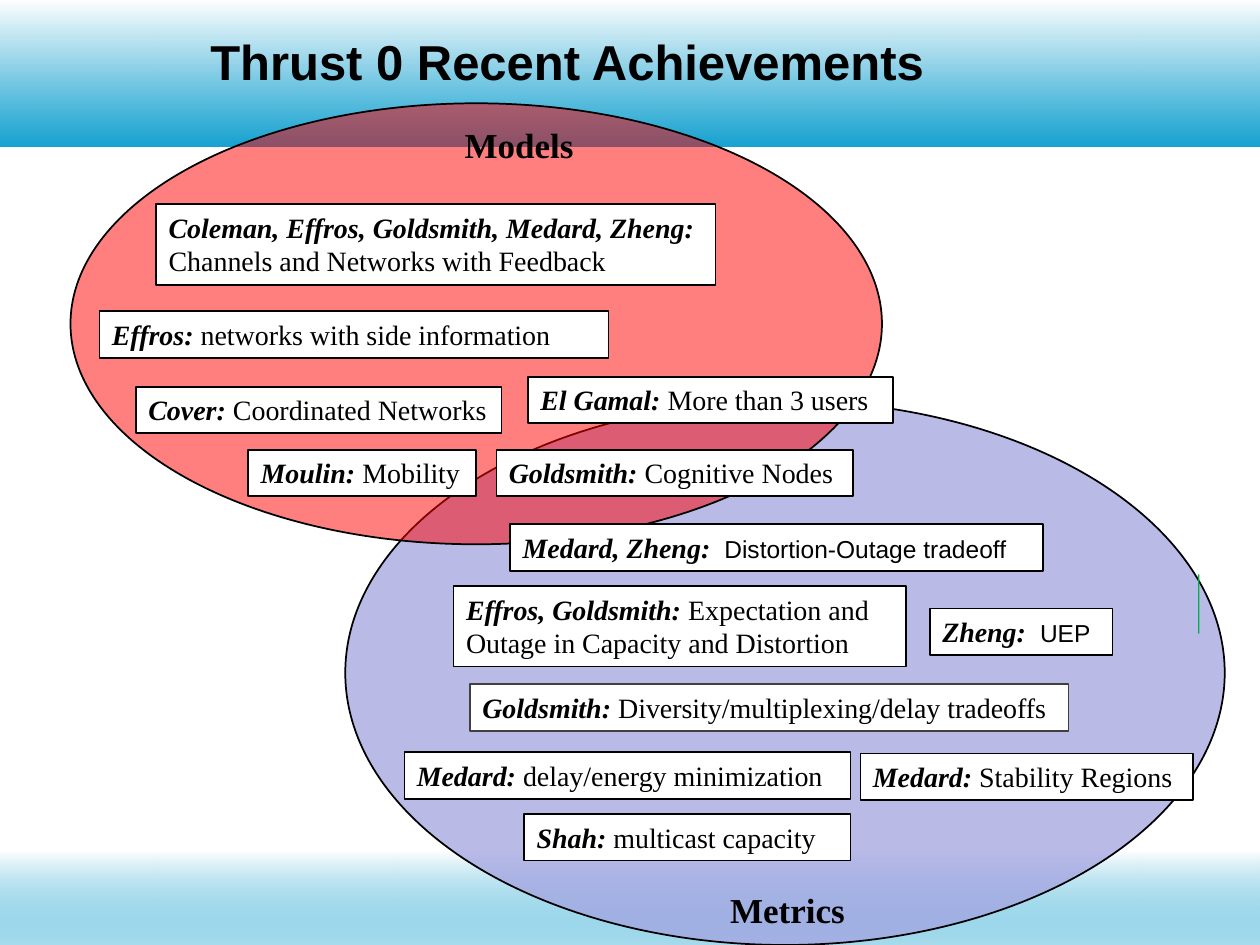
from dataclasses import dataclass

from lxml import etree
from pptx import Presentation
from pptx.dml.color import RGBColor
from pptx.enum.shapes import MSO_SHAPE
from pptx.enum.text import MSO_ANCHOR, MSO_AUTO_SIZE, PP_ALIGN
from pptx.oxml.ns import qn
from pptx.util import Inches, Pt

RECTANGLE, ELLIPSE = MSO_SHAPE.RECTANGLE, MSO_SHAPE.OVAL
TOP, MIDDLE = MSO_ANCHOR.TOP, MSO_ANCHOR.MIDDLE
LEFT, CENTER = PP_ALIGN.LEFT, PP_ALIGN.CENTER
GROW, FIXED = MSO_AUTO_SIZE.SHAPE_TO_FIT_TEXT, MSO_AUTO_SIZE.NONE
COLUMNS, ROWS = 100, 75


@dataclass(frozen=True)
class Theme:
    ink: str = "000000"
    paper: str = "FFFFFF"
    band: str = "0099CC"
    models: str = "FF0000"
    metrics: str = "A3A3E0"
    soft_line: str = "404040"
    marker: str = "00B050"
    serif: str = "Times New Roman"
    sans: str = "Arial"
    title_size: int = 28
    heading_size: int = 20
    label_size: int = 16
    small_size: int = 14


def apply(target, values):
    for name, value in values.items():
        setattr(target, name, value)


def set_alpha(color_element, percent):
    alpha = etree.SubElement(color_element, qn("a:alpha"))
    alpha.set("val", str(percent * 1000))


class SlideBuilder:
    def __init__(self, presentation, theme):
        self.theme = theme
        self.slide = presentation.slides.add_slide(presentation.slide_layouts[6])
        self.column = presentation.slide_width / COLUMNS
        self.row = presentation.slide_height / ROWS

    def place(self, left, top, width, height):
        return [round(length * unit) for length, unit in
                zip((left, top, width, height), (self.column, self.row) * 2)]

    def shape(self, kind, box, fill=None, line=None, alpha=100):
        shape = self.slide.shapes.add_shape(kind, *self.place(*box))
        shape.shadow.inherit = False
        if fill:
            shape.fill.solid()
            shape.fill.fore_color.rgb = RGBColor.from_string(fill)
            if alpha < 100:
                set_alpha(shape.fill._xPr.find(".//" + qn("a:srgbClr")), alpha)
        if line:
            shape.line.color.rgb = RGBColor.from_string(line)
            shape.line.width = Pt(1)
        else:
            shape.line.fill.background()
        return shape

    def band(self, top, height, alpha):
        fill = self.shape(RECTANGLE, (0, top, COLUMNS, height)).fill
        fill.gradient()
        fill.gradient_angle = 270
        stops = zip(fill.gradient_stops, (self.theme.paper, self.theme.band), (0, 1))
        for stop, color, position in stops:
            stop.color.rgb = RGBColor.from_string(color)
            stop.position = position
        set_alpha(fill._xPr.findall(".//" + qn("a:srgbClr"))[-1], alpha)

    def run(self, paragraph, text, **format_values):
        run = paragraph.add_run()
        run.text = text
        values = {"name": self.theme.serif, "size": Pt(self.theme.label_size)}
        apply(run.font, {**values, **format_values})
        run.font.color.rgb = RGBColor.from_string(self.theme.ink)

    def title(self, text, box):
        frame = self.slide.shapes.add_textbox(*self.place(*box)).text_frame
        apply(frame, {"word_wrap": True, "vertical_anchor": MIDDLE, "margin_left": 0,
                      "margin_right": 0, "margin_top": 0, "margin_bottom": 0})
        frame.paragraphs[0].line_spacing = 0.73
        self.run(frame.paragraphs[0], text, name=self.theme.sans,
                 size=Pt(self.theme.title_size), bold=True)

    def heading(self, text, box):
        frame = self.slide.shapes.add_textbox(*self.place(*box)).text_frame
        apply(frame, {"word_wrap": False, "auto_size": FIXED, "vertical_anchor": TOP})
        frame.paragraphs[0].alignment = CENTER
        self.run(frame.paragraphs[0], text, size=Pt(self.theme.heading_size), bold=True)

    def label(self, left, top, width, authors, lines, line=None, small=False):
        height = 1 + 2.7 * len(lines)
        shape = self.shape(RECTANGLE, (left, top, width, height), self.theme.paper,
                           line or self.theme.ink)
        frame = shape.text_frame
        apply(frame, {"word_wrap": True, "auto_size": GROW, "vertical_anchor": TOP})
        topic_format = {"name": self.theme.sans, "size": Pt(self.theme.small_size)} if small else {}
        for index, text in enumerate(lines):
            paragraph = frame.add_paragraph() if index else frame.paragraphs[0]
            paragraph.alignment = LEFT
            if index == 0:
                self.run(paragraph, authors, bold=True, italic=True)
            if text:
                self.run(paragraph, text, **topic_format)


def main():
    presentation = Presentation()
    apply(presentation, {"slide_width": Inches(10), "slide_height": Inches(7.5)})
    theme = Theme()
    builder = SlideBuilder(presentation, theme)

    builder.band(0, 11.6, 91)
    builder.band(67.5, 7.5, 34)
    builder.shape(ELLIPSE, (27.4, 31.8, 69.8, 43.2), theme.metrics, theme.ink, 75)
    builder.shape(ELLIPSE, (5.6, 8.2, 64.4, 35), theme.models, theme.ink, 50)
    builder.title("Thrust 0 Recent Achievements", (16.7, 2.5, 87.4, 5.7))
    builder.shape(RECTANGLE, (95.1, 45.6, 0.1, 4.7), theme.marker)
    builder.heading("Metrics", (50.5, 70, 24, 5))
    builder.heading("Models", (29.2, 9.3, 24, 8.1))

    labels = [
        (36, 46.5, 35.9, "Effros, Goldsmith: ",
         ["Expectation and", "Outage in Capacity and Distortion"]),
        (7.9, 24.7, 40.4, "Effros:", [" networks with side information"]),
        (41.6, 64.6, 25.9, "Shah:", [" multicast capacity"]),
        (19.7, 35.7, 18.1, "Moulin: ", ["Mobility"]),
        (32.1, 59.7, 35.4, "Medard: ", ["delay/energy minimization"]),
        (12.4, 16.2, 44.4, "Coleman, Effros, Goldsmith, Medard, Zheng:",
         ["", "Channels and Networks with Feedback"]),
        (39.4, 35.7, 28.3, "Goldsmith: ", ["Cognitive Nodes"]),
        (10.8, 30.7, 29, "Cover: ", ["Coordinated Networks"]),
        (68.3, 59.8, 26.4, "Medard: ", ["Stability Regions"]),
        (41.9, 29.9, 29, "El Gamal: ", ["More than 3 users"]),
    ]
    for label in labels:
        builder.label(*label)
    builder.label(37.3, 54.3, 47.5, "Goldsmith: ",
                  ["Diversity/multiplexing/delay tradeoffs"], line=theme.soft_line)
    builder.label(73.8, 48.3, 14.5, "Zheng:  ", ["UEP"], small=True)
    builder.label(40.5, 41.6, 42.3, "Medard, Zheng:  ",
                  ["Distortion-Outage tradeoff"], small=True)

    presentation.save("out.pptx")


if __name__ == "__main__":
    main()
